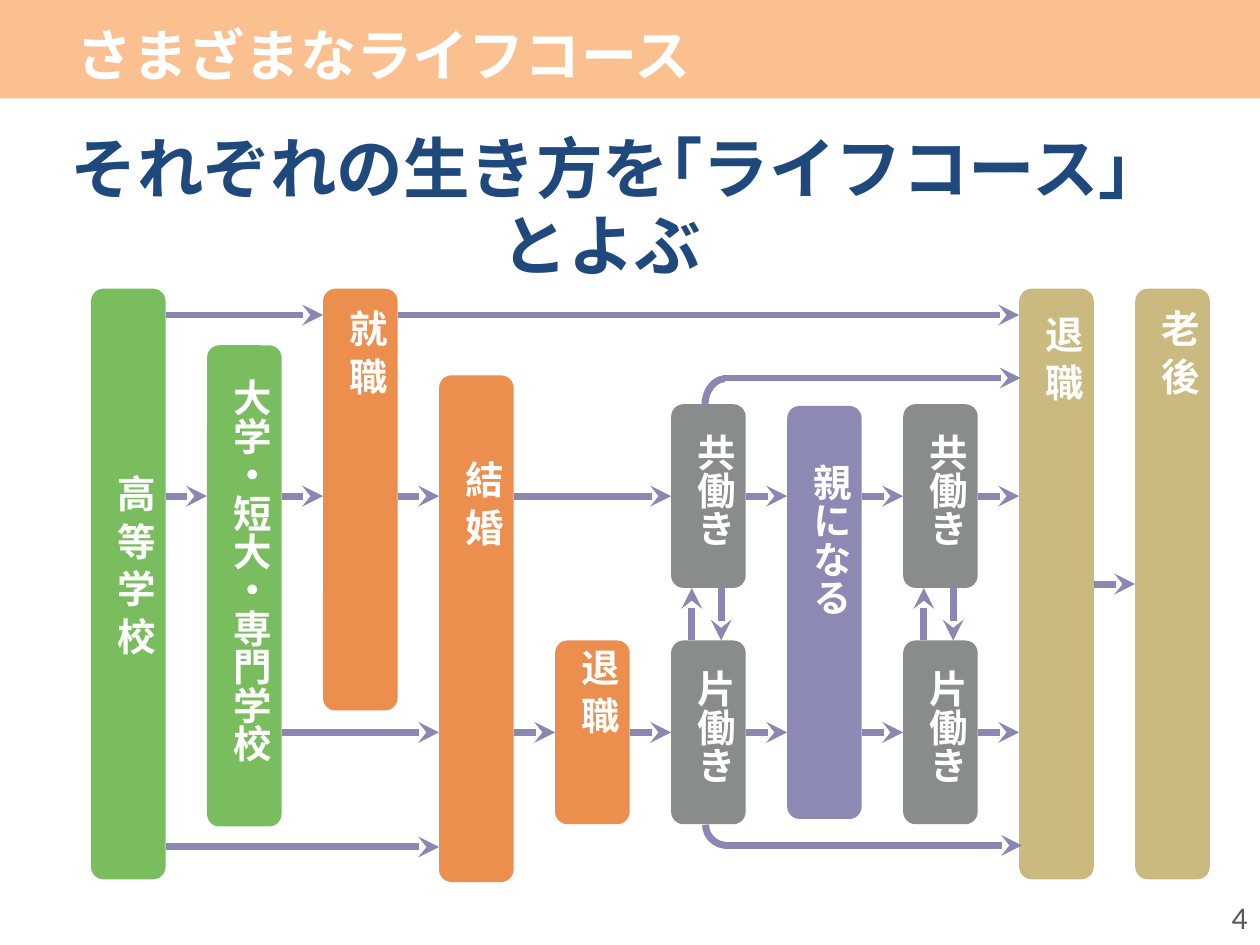
from lxml import etree
from pptx import Presentation
from pptx.dml.color import RGBColor
from pptx.enum.shapes import MSO_CONNECTOR, MSO_SHAPE
from pptx.enum.text import MSO_ANCHOR, MSO_AUTO_SIZE, PP_ALIGN
from pptx.oxml.ns import qn
from pptx.util import Pt

RECT, ROUNDED, ARC = MSO_SHAPE.RECTANGLE, MSO_SHAPE.ROUNDED_RECTANGLE, MSO_SHAPE.ARC
STRAIGHT = MSO_CONNECTOR.STRAIGHT
TOP, MIDDLE = MSO_ANCHOR.TOP, MSO_ANCHOR.MIDDLE
LEFT, CENTER, RIGHT = PP_ALIGN.LEFT, PP_ALIGN.CENTER, PP_ALIGN.RIGHT
NO_AUTOFIT = MSO_AUTO_SIZE.NONE
LEFT_SITE, RIGHT_SITE = 1, 3

COLORS = {
    "band": "FAC090", "white": "FFFFFF", "navy": "1F497D", "number": "595959",
    "study": "7ABD5F", "work": "EC8E4E", "couple": "888C8B",
    "parent": "8C89B5", "later": "CABA80", "arrow": "8A87B3",
}
JAPANESE, LATIN = "Noto Sans CJK JP", "Calibri"
FIRST_COLUMN, COLUMN_PITCH, STAGE_WIDTH = 52, 66.3, 42.6
TOP_ROW, DUAL_ROW, SINGLE_ROW, BOTTOM_ROW = 180, 283.5, 418.5, 484

STAGES = {
    "school": (0, 165, 337.5, "study", "高 等 学 校", 264, 139),
    "college": (1, 197.3, 275, "study", "大学・短大・専門学校", 209.5, 247),
    "job": (2, 165, 241, "work", "就 職", 170, 229),
    "marriage": (3, 214.5, 289.5, "work", "結 婚", 256.3, 188),
    "quit": (4, 366, 105, "work", "退 職", 363.6, 98.6),
    "dual": (5, 231, 105, "couple", "共働き", 240.5, 83.5),
    "single": (5, 366, 105, "couple", "片働き", 375.8, 83.5),
    "parent": (6, 232, 236, "parent", "親になる", 257.8, 168.5),
    "dual_parent": (7, 231, 105, "couple", "共働き", 240.5, 83.5),
    "single_parent": (7, 366, 105, "couple", "片働き", 375.8, 83.5),
    "retire": (8, 165, 337.5, "later", "退 職", 173.5, 322),
    "old_age": (9, 165, 337.5, "later", "老 後", 170, 327),
}
ROUTES = [
    (TOP_ROW, ["school", "job", "retire"]),
    (DUAL_ROW, ["school", "college", "job", "marriage", "dual", "parent",
                "dual_parent", "retire"]),
    (SINGLE_ROW, ["college", "marriage", "quit", "single", "parent",
                  "single_parent", "retire"]),
    (BOTTOM_ROW, ["school", "marriage"]),
    (333.75, ["retire", "old_age"]),
]
BYPASSES = [
    ((399.6, 219.6, 29.5, 23), 272.8, (413.3, 583.2), 216),
    ((403.2, 460.1, 24.5, 23), 186.3, (414, 584), 483.1),
]


class LifeCourseSlide:
    def __init__(self, slide):
        self.slide = slide
        self.shapes = slide.shapes

    def color(self, name):
        return RGBColor.from_string(COLORS[name])

    def fill_text(self, holder, text, size, color, align, anchor=TOP,
                  font=JAPANESE, bold=True):
        frame = holder.text_frame
        frame.word_wrap = True
        frame.auto_size = NO_AUTOFIT
        frame.vertical_anchor = anchor
        paragraph = frame.paragraphs[0]
        paragraph.alignment = align
        run = paragraph.add_run()
        run.text = text
        run.font.size = Pt(size)
        run.font.bold = bold
        run.font.name = font
        run.font.color.rgb = self.color(color)
        east_asian = etree.SubElement(run.font._element, qn("a:ea"))
        east_asian.set("typeface", font)
        return paragraph

    def title(self, text, box):
        heading = self.shapes.title
        heading.left, heading.top, heading.width, heading.height = map(Pt, box)
        self.fill_text(heading, text, 32, "white", LEFT, MIDDLE)

    def text(self, text, box, size, color, align, **style):
        holder = self.shapes.add_textbox(*map(Pt, box))
        return self.fill_text(holder, text, size, color, align, **style)

    def vertical_text(self, text, box):
        holder = self.shapes.add_textbox(*map(Pt, box))
        self.fill_text(holder, text, 22, "white", LEFT)
        holder.text_frame._txBody.bodyPr.set("vert", "eaVert")

    def block(self, kind, box, color):
        block = self.shapes.add_shape(kind, *map(Pt, box))
        block.shadow.inherit = False
        block.fill.solid()
        block.fill.fore_color.rgb = self.color(color)
        block.line.fill.background()
        return block

    def stroke(self, line):
        line.color.rgb = self.color("arrow")
        line.width = Pt(4)

    def arc(self, box, rotation):
        arc = self.shapes.add_shape(ARC, *map(Pt, box))
        arc.shadow.inherit = False
        arc.fill.background()
        arc.adjustments[0], arc.adjustments[1] = 158.47, 213.33
        arc.rotation = rotation
        self.stroke(arc.line)

    def arrow(self, x1, y1, x2, y2):
        arrow = self.shapes.add_connector(STRAIGHT, *map(Pt, (x1, y1, x2, y2)))
        self.stroke(arrow.line)
        properties = arrow.element.spPr
        head = etree.SubElement(properties.find(qn("a:ln")), qn("a:tailEnd"))
        head.set("type", "stealth")
        etree.SubElement(properties, qn("a:effectLst"))
        return arrow

    def link(self, source, target, y):
        arrow = self.arrow((source.left + source.width) / Pt(1), y, target.left.pt, y)
        if self.is_middle(source, y):
            arrow.begin_connect(source, RIGHT_SITE)
        if self.is_middle(target, y):
            arrow.end_connect(target, LEFT_SITE)

    def is_middle(self, stage, y):
        return abs(stage.top.pt + stage.height.pt / 2 - y) < 0.5


def main():
    deck = Presentation()
    deck.slide_width, deck.slide_height = Pt(720), Pt(540)
    page = LifeCourseSlide(deck.slides.add_slide(deck.slide_layouts[5]))

    band = page.block(RECT, (0, 0, 720, 56.2), "band")
    page.shapes.title.element.addprevious(band.element)
    page.title("さまざまなライフコース", (36.7, 2.2, 523.4, 56.9))
    message = page.text("それぞれの生き方を｢ライフコース｣とよぶ",
                        (18, 70.5, 651.6, 96), 38, "navy", CENTER)
    message.line_spacing = Pt(44)
    page.text("4", (552.2, 509.8, 167.8, 28.8), 18, "number", RIGHT,
              anchor=MIDDLE, font=LATIN, bold=False)

    stages = {}
    for key, (column, top, height, color, label, label_top, label_height) in STAGES.items():
        left = FIRST_COLUMN + column * COLUMN_PITCH
        stages[key] = page.block(ROUNDED, (left, top, STAGE_WIDTH, height), color)
        page.vertical_text(label, (left + 1, label_top, 41, label_height))

    for y, route in ROUTES:
        for source, target in zip(route, route[1:]):
            page.link(stages[source], stages[target], y)

    for upper, lower in (("dual", "single"), ("dual_parent", "single_parent")):
        left = stages[upper].left.pt
        gap_top = stages[upper].top.pt + stages[upper].height.pt
        gap_bottom = stages[lower].top.pt
        page.arrow(left + 11.8, gap_bottom, left + 11.8, gap_top)
        page.arrow(left + 28.6, gap_top, left + 28.6, gap_bottom)

    for bend, rotation, (start, end), y in BYPASSES:
        page.arc(bend, rotation)
        page.arrow(start, y, end, y)

    deck.save("out.pptx")


if __name__ == "__main__":
    main()
